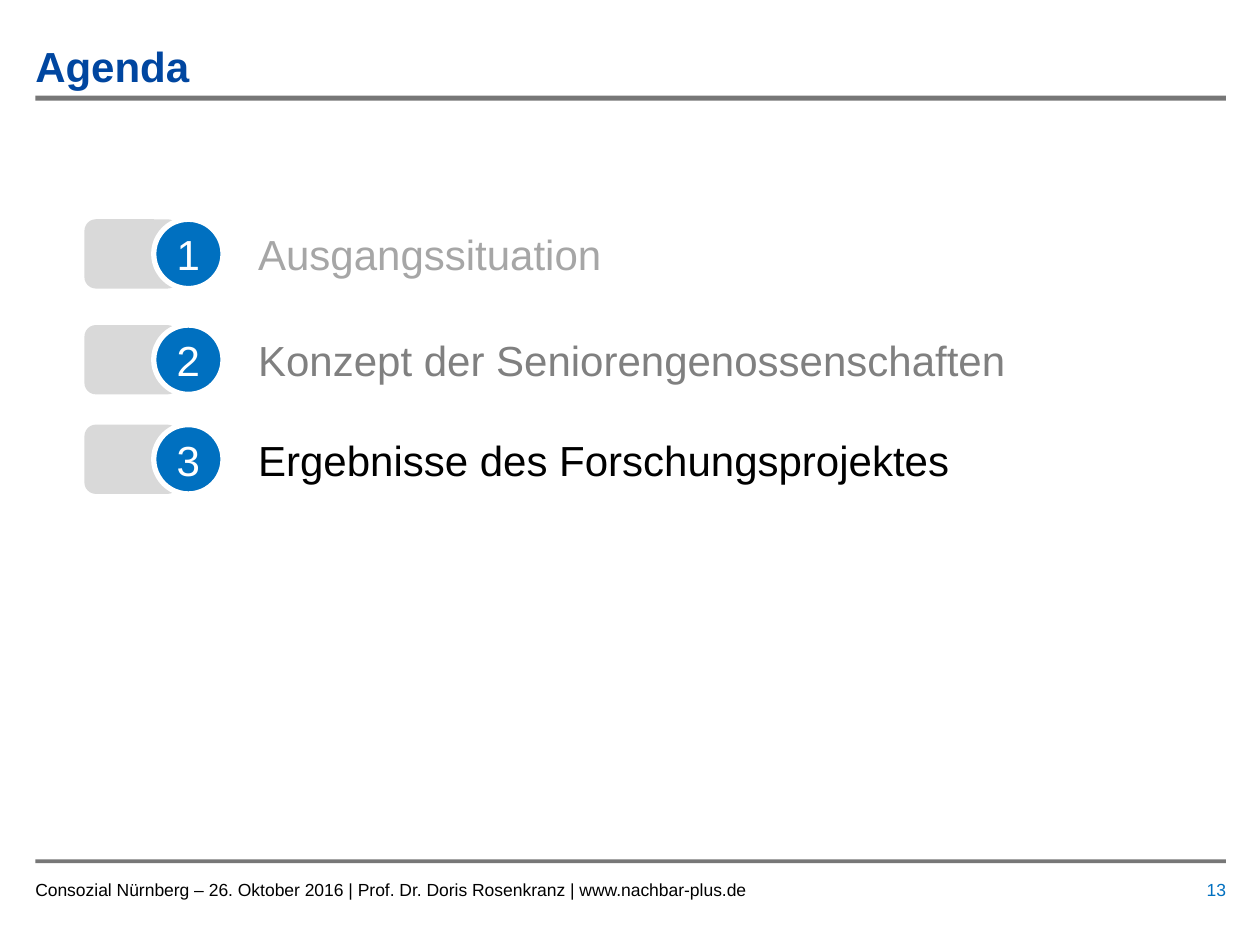
from pptx import Presentation
from pptx.dml.color import RGBColor
from pptx.enum.shapes import MSO_SHAPE
from pptx.enum.text import MSO_ANCHOR, PP_ALIGN
from pptx.util import Inches, Pt

COLORS = {
    "title": "0046A0",
    "rule": "777777",
    "tab": "D9D9D9",
    "accent": "0070C0",
    "white": "FFFFFF",
    "black": "000000",
    "past": "A6A6A6",
    "recent": "808080",
}

AGENDA = [
    (1.74, "Ausgangssituation", "past"),
    (2.58, "Konzept der Seniorengenossenschaften", "recent"),
    (3.37, "Ergebnisse des Forschungsprojektes", "black"),
]

NO_MARGINS = dict.fromkeys(
    ("margin_left", "margin_top", "margin_right", "margin_bottom"), 0
)


def set_attributes(target, values):
    for name, value in values.items():
        setattr(target, name, value)


class SlideBuilder:
    """Holds the text style and the slide being filled."""

    font_name = "Arial"

    def __init__(self, slide):
        self.slide = slide

    def color(self, name):
        return RGBColor.from_string(COLORS[name])

    def fill_text(self, shape, text, size, color, bold=False,
                  alignment=PP_ALIGN.LEFT, **frame_format):
        frame = shape.text_frame
        set_attributes(frame, {"word_wrap": True, **frame_format})
        paragraph = frame.paragraphs[0]
        paragraph.alignment = alignment
        run = paragraph.add_run()
        run.text = text
        set_attributes(run.font, {"name": self.font_name, "size": Pt(size), "bold": bold})
        run.font.color.rgb = self.color(color)

    def text(self, box, text, size, color, parent=None, **text_format):
        shapes = (parent or self.slide).shapes
        textbox = shapes.add_textbox(*map(Inches, box))
        self.fill_text(textbox, text, size, color, **text_format)

    def shape(self, kind, box, fill, parent=None, outline=None):
        shapes = (parent or self.slide).shapes
        shape = shapes.add_shape(kind, *map(Inches, box))
        shape.shadow.inherit = False
        shape.fill.solid()
        shape.fill.fore_color.rgb = self.color(fill)
        if outline:
            shape.line.color.rgb = self.color(outline)
            shape.line.width = Pt(3)
        else:
            shape.line.fill.background()
        return shape

    def agenda_item(self, number, top, text, color):
        """Draws a grouped row: grey tab, numbered circle and topic."""
        group = self.slide.shapes.add_group_shape()
        self.shape(MSO_SHAPE.ROUNDED_RECTANGLE, (0.67, top, 0.75, 0.55), "tab", group)
        circle = self.shape(MSO_SHAPE.OVAL, (1.22, top, 0.55, 0.55), "accent", group, "white")
        self.fill_text(circle, str(number), 24, "white", alignment=PP_ALIGN.CENTER,
                       vertical_anchor=MSO_ANCHOR.MIDDLE, **NO_MARGINS)
        self.text((1.95, top - 0.12, 6.69, 0.79), text, 24, color, group,
                  vertical_anchor=MSO_ANCHOR.MIDDLE)


def main():
    presentation = Presentation()
    set_attributes(presentation, {"slide_width": Inches(10), "slide_height": Inches(7.5)})
    builder = SlideBuilder(presentation.slides.add_slide(presentation.slide_layouts[6]))

    for top, height in ((6.82, 0.03), (0.76, 0.04)):
        builder.shape(MSO_SHAPE.RECTANGLE, (0.28, top, 9.45, height), "rule")
    builder.text((0.28, 0.21, 9.45, 0.63), "Agenda", 24, "title", bold=True,
                 vertical_anchor=MSO_ANCHOR.MIDDLE, **NO_MARGINS)

    for number, (top, text, color) in enumerate(AGENDA, start=1):
        builder.agenda_item(number, top, text, color)

    builder.text(
        (0.28, 6.98, 7.85, 0.39),
        "Consozial Nürnberg – 26. Oktober 2016 | Prof. Dr. Doris Rosenkranz | www.nachbar-plus.de",
        10, "black", **NO_MARGINS)
    builder.text((8.94, 6.98, 0.79, 0.2), "13", 10, "accent",
                 alignment=PP_ALIGN.RIGHT, **NO_MARGINS)
    presentation.save("out.pptx")


if __name__ == "__main__":
    main()
